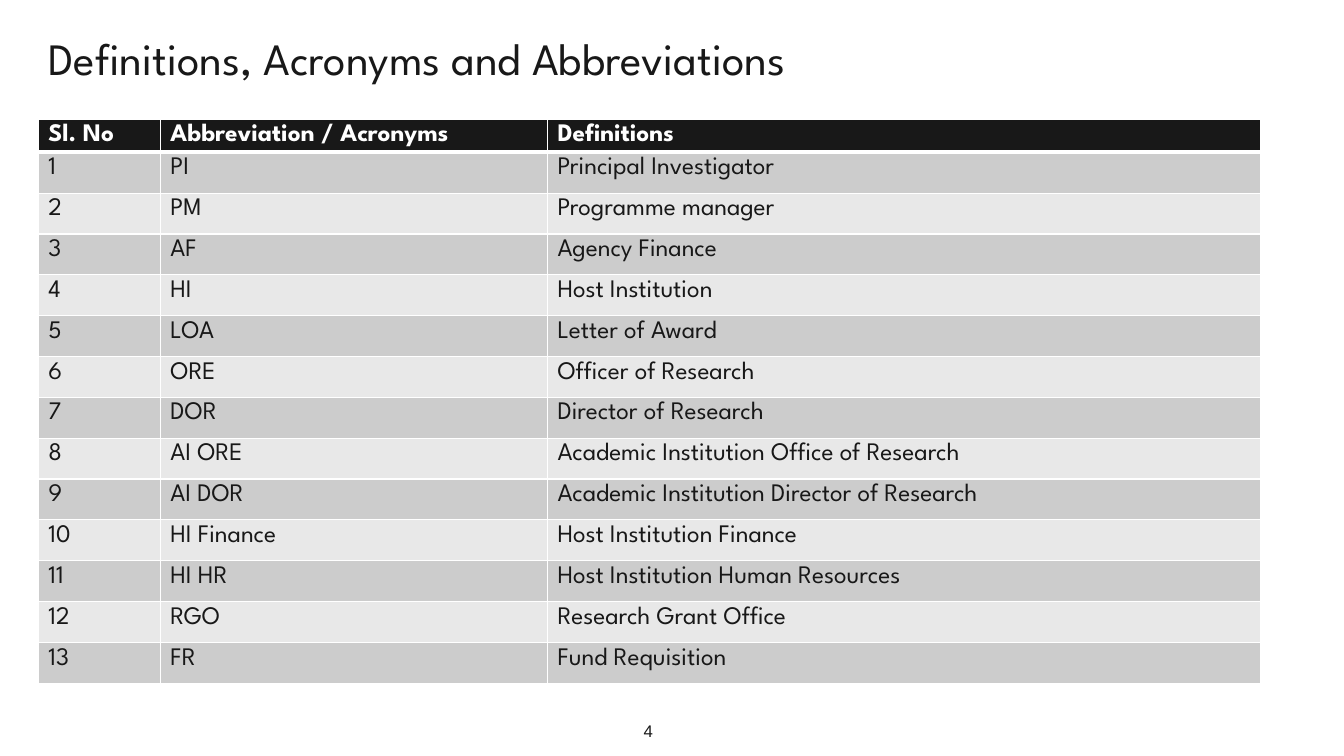
from lxml import etree
from pptx import Presentation
from pptx.dml.color import RGBColor
from pptx.enum.text import MSO_ANCHOR, PP_ALIGN
from pptx.oxml.ns import qn
from pptx.util import Inches, Pt

MIDDLE = MSO_ANCHOR.MIDDLE
LEFT, CENTER = PP_ALIGN.LEFT, PP_ALIGN.CENTER
INK, WHITE = "181818", "FFFFFF"
BANDS = ["E8E8E8", "CCCCCC"]
HEADING_FONT = "League Spartan"

HEADINGS = ("Sl. No", "Abbreviation / Acronyms", "Definitions")
ACRONYMS = [
    ("PI", "Principal Investigator"),
    ("PM", "Programme manager"),
    ("AF", "Agency Finance"),
    ("HI", "Host Institution"),
    ("LOA", "Letter of Award"),
    ("ORE", "Officer of Research"),
    ("DOR", "Director of Research"),
    ("AI ORE", "Academic Institution Office of Research"),
    ("AI DOR", "Academic Institution Director of Research"),
    ("HI Finance", "Host Institution Finance"),
    ("HI HR", "Host Institution Human Resources"),
    ("RGO", "Research Grant Office"),
    ("FR", "Fund Requisition"),
]
COLUMN_WIDTHS = (1.21, 3.84, 7.07)
MARGIN, CONTENT_WIDTH = 0.38, sum(COLUMN_WIDTHS)
TABLE_TOP, HEADER_HEIGHT, BODY_HEIGHT = 1.18, 0.33, 5.27


def write(frame, text, size, font=HEADING_FONT, color=INK, bold=False, align=LEFT):
    paragraph = frame.paragraphs[0]
    paragraph.alignment = align
    run = paragraph.add_run()
    run.text = text
    run.font.size = Pt(size)
    run.font.name = font
    run.font.bold = bold
    run.font.color.rgb = RGBColor.from_string(color)


def add_borders(cell, widths):
    properties = cell._tc.get_or_add_tcPr()
    for position, (side, width) in enumerate(widths.items()):
        line = etree.Element(qn(f"a:ln{side}"), w=str(Pt(width)))
        fill = etree.SubElement(line, qn("a:solidFill"))
        etree.SubElement(fill, qn("a:srgbClr"), val=WHITE)
        properties.insert(position, line)


deck = Presentation()
deck.slide_width, deck.slide_height = Inches(13.33), Inches(7.5)
slide = deck.slides.add_slide(deck.slide_layouts[5])

title = slide.shapes.title
title.left, title.top = Inches(MARGIN), Inches(0.13)
title.width, title.height = Inches(CONTENT_WIDTH), Inches(0.88)
title.text_frame.vertical_anchor = MIDDLE
write(title.text_frame, "Definitions, Acronyms and Abbreviations", 32)

entries = [HEADINGS] + [
    (str(number), *acronym) for number, acronym in enumerate(ACRONYMS, 1)
]
glossary = slide.shapes.add_table(
    len(entries), len(HEADINGS), Inches(MARGIN), Inches(TABLE_TOP),
    Inches(CONTENT_WIDTH), Inches(HEADER_HEIGHT + BODY_HEIGHT),
).table
for column, width in zip(glossary.columns, COLUMN_WIDTHS):
    column.width = Inches(width)

for index, entry in enumerate(entries):
    is_header = index == 0
    row_height = HEADER_HEIGHT if is_header else BODY_HEIGHT / len(ACRONYMS)
    glossary.rows[index].height = Inches(row_height)
    borders = {"L": 1, "R": 1, "T": 3 if index == 1 else 1, "B": 3 if is_header else 1}
    for cell, text in zip(glossary.rows[index].cells, entry):
        cell.fill.solid()
        cell.fill.fore_color.rgb = RGBColor.from_string(INK if is_header else BANDS[index % 2])
        add_borders(cell, borders)
        write(cell.text_frame, text, 18, color=WHITE if is_header else INK, bold=is_header)

page_number = slide.shapes.add_textbox(Inches(6.11), Inches(7.05), Inches(0.64), Inches(0.4))
page_number.text_frame.word_wrap = True
page_number.text_frame.vertical_anchor = MIDDLE
write(page_number.text_frame, "4", 12, font="Arial", align=CENTER)

deck.save("out.pptx")
